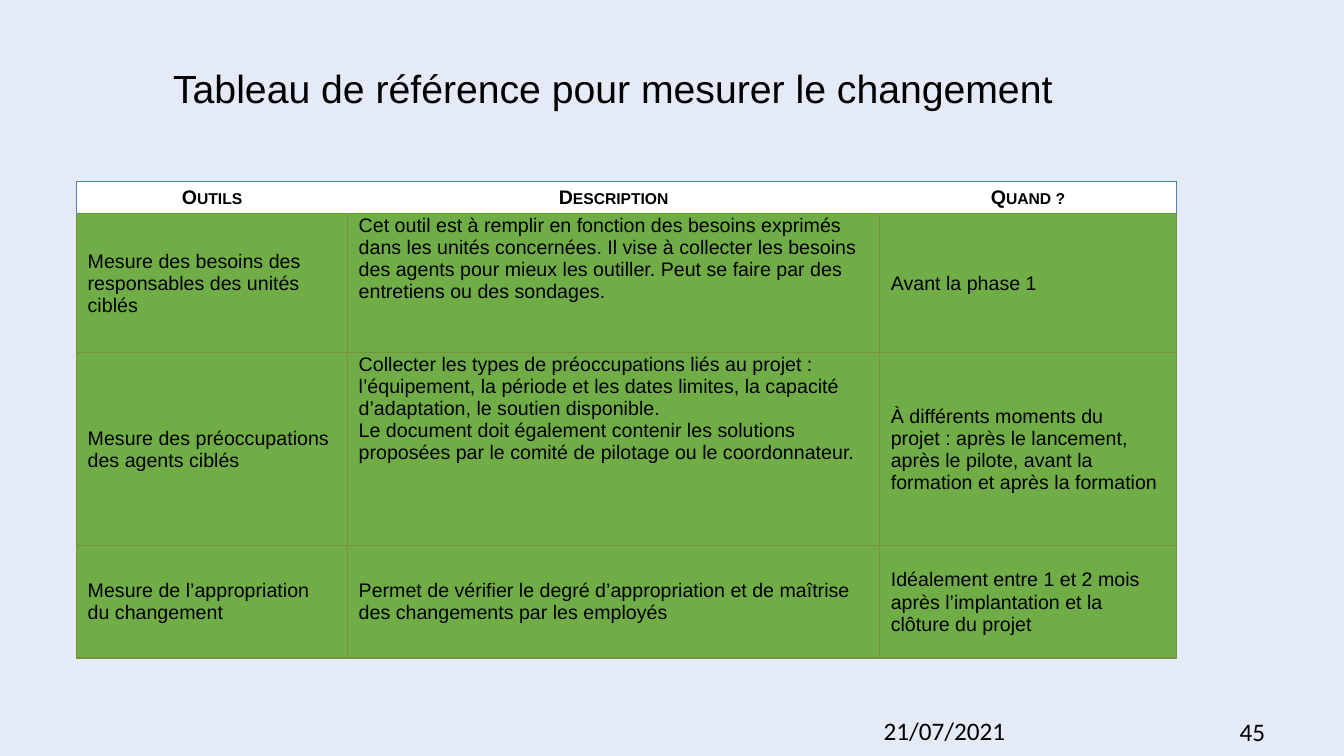
from lxml import etree
from pptx import Presentation
from pptx.dml.color import RGBColor
from pptx.enum.text import MSO_ANCHOR, MSO_AUTO_SIZE, PP_ALIGN
from pptx.oxml.ns import qn
from pptx.util import Cm, Pt

THEME = {
    "background": RGBColor.from_string("E4EAF6"),
    "ink": RGBColor.from_string("000000"),
    "header_fill": RGBColor.from_string("FFFFFF"),
    "body_fill": RGBColor.from_string("70AD47"),
    "header_line": "4F81BD",
    "body_line": "76923C",
    "title": {"name": "Arial", "size": Pt(28), "bold": False},
    "header": {"name": "Arial", "size": Pt(14), "bold": True},
    "body": {"name": "Arial", "size": Pt(14), "bold": False},
    "footer": {"name": "Calibri", "size": Pt(18), "bold": False},
}


def write(frame, lines, style, align, **frame_format):
    for name, value in frame_format.items():
        setattr(frame, name, value)
    for index, line in enumerate(lines):
        para = frame.paragraphs[0] if index == 0 else frame.add_paragraph()
        para.alignment = align
        span = para.add_run()
        span.text = line
        for name, value in THEME[style].items():
            setattr(span.font, name, value)
        span.font.color.rgb = THEME["ink"]


def add_borders(cell, colours):
    properties = cell._tc.get_or_add_tcPr()
    for index, (side, colour) in enumerate(colours.items()):
        border = etree.Element(qn(f"a:ln{side}"), w=str(Pt(1)))
        if colour:
            fill = etree.SubElement(border, qn("a:solidFill"))
            etree.SubElement(fill, qn("a:srgbClr"), val=colour)
        else:
            etree.SubElement(border, qn("a:noFill"))
        properties.insert(index, border)


deck = Presentation()
deck.slide_width, deck.slide_height = Cm(33.87), Cm(19.05)
page = deck.slides.add_slide(deck.slide_layouts[5])
page.background.fill.solid()
page.background.fill.fore_color.rgb = THEME["background"]

title = page.shapes.title
title.left, title.top, title.width, title.height = Cm(4.01), Cm(1.32), Cm(22.86), Cm(1.96)
write(title.text_frame, ["Tableau de référence pour mesurer le changement"], "title",
      PP_ALIGN.CENTER, word_wrap=True, auto_size=MSO_AUTO_SIZE.NONE,
      vertical_anchor=MSO_ANCHOR.MIDDLE)
title.text_frame.paragraphs[0].line_spacing = 0.9

ROWS = [
    [["Outils"], ["Description"], ["Quand ?"]],
    [
        ["Mesure des besoins des responsables des unités ciblés"],
        ["Cet outil est à remplir en fonction des besoins exprimés dans les unités "
         "concernées. Il vise à collecter les besoins des agents pour mieux les outiller. "
         "Peut se faire par des entretiens ou des sondages."],
        ["Avant la phase 1"],
    ],
    [
        ["Mesure des préoccupations des agents ciblés"],
        ["Collecter les types de préoccupations liés au projet : l’équipement, la période "
         "et les dates limites, la capacité d’adaptation, le soutien disponible.",
         "Le document doit également contenir les solutions proposées par le comité de "
         "pilotage ou le coordonnateur."],
        ["À différents moments du projet : après le lancement, après le pilote, avant la "
         "formation et après la formation"],
    ],
    [
        ["Mesure de l’appropriation du changement"],
        ["Permet de vérifier le degré d’appropriation et de maîtrise des changements par "
         "les employés"],
        ["Idéalement entre 1 et 2 mois après l’implantation et la clôture du projet"],
    ],
]
COLUMN_WIDTHS = [6.83, 13.41, 7.47]
ROW_HEIGHTS = [0.81, 3.51, 4.85, 2.84]
TOP_ANCHORED = [(1, 1), (2, 1)]

table = page.shapes.add_table(len(ROWS), len(COLUMN_WIDTHS), Cm(1.93), Cm(4.57),
                              Cm(sum(COLUMN_WIDTHS)), Cm(sum(ROW_HEIGHTS))).table
table.first_row = table.horz_banding = False
for column, width in zip(table.columns, COLUMN_WIDTHS):
    column.width = Cm(width)
for row, height in zip(table.rows, ROW_HEIGHTS):
    row.height = Cm(height)

cell_format = {"margin_left": Cm(0.28), "margin_right": Cm(0.28),
               "margin_top": Cm(0.03), "margin_bottom": Cm(0)}
last_column = len(COLUMN_WIDTHS) - 1
for row_index, row_texts in enumerate(ROWS):
    is_header = row_index == 0
    style = "header" if is_header else "body"
    line = THEME[f"{style}_line"]
    for column_index, lines in enumerate(row_texts):
        cell = table.cell(row_index, column_index)
        for name, value in cell_format.items():
            setattr(cell, name, value)
        is_top = (row_index, column_index) in TOP_ANCHORED
        cell.vertical_anchor = MSO_ANCHOR.TOP if is_top else MSO_ANCHOR.MIDDLE
        cell.fill.solid()
        cell.fill.fore_color.rgb = THEME[f"{style}_fill"]
        write(cell.text_frame, lines, style, PP_ALIGN.CENTER if is_header else PP_ALIGN.LEFT)
        if is_header:
            cell.text_frame.paragraphs[0].runs[0].font._element.set("cap", "small")
        add_borders(cell, {
            "L": None if is_header and column_index > 0 else line,
            "R": None if is_header and column_index < last_column else line,
            "T": THEME["header_line"] if row_index <= 1 else line,
            "B": line,
        })

for text, left, top, width in [("21/07/2021", 22.02, 17.91, 7.62), ("45", 30.99, 17.93, 2.79)]:
    box = page.shapes.add_textbox(Cm(left), Cm(top), Cm(width), Cm(1.02))
    write(box.text_frame, [text], "footer", PP_ALIGN.LEFT, word_wrap=True)

deck.save("out.pptx")
